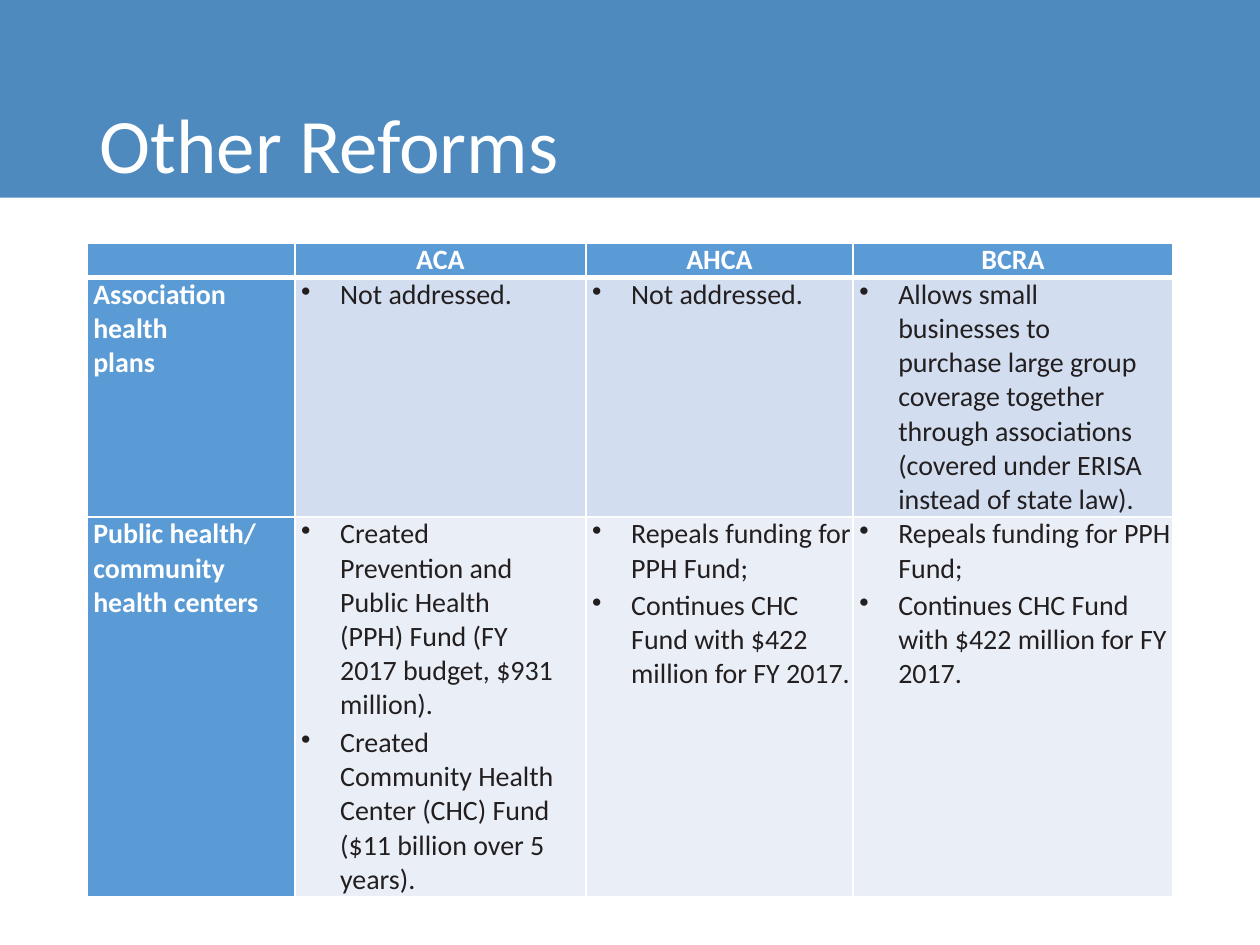
from lxml.etree import SubElement
from pptx import Presentation
from pptx.dml.color import RGBColor
from pptx.enum.shapes import MSO_SHAPE
from pptx.enum.text import MSO_ANCHOR, PP_ALIGN
from pptx.oxml.ns import qn
from pptx.util import Inches, Pt

FONT = "Calibri"
WHITE = RGBColor(0xFF, 0xFF, 0xFF)
INK = RGBColor(0x23, 0x1F, 0x20)
BANNER_BLUE = RGBColor(0x4E, 0x8A, 0xBE)
HEADER_BLUE = RGBColor(0x5B, 0x9B, 0xD5)
ROW_FILLS = [RGBColor(0xD2, 0xDE, 0xEF), RGBColor(0xEA, 0xEF, 0xF7)]

COLUMN_WIDTHS = [1.65, 2.31, 2.12, 2.54]
ROW_HEIGHTS = [0.27, 1.9, 3.01]
BILLS = ["", "ACA", "AHCA", "BCRA"]
CHC_CONTINUES = "Continues CHC Fund with $422 million for FY 2017."
PPH_REPEAL = "Repeals funding for PPH Fund;"
# Each reform: its heading lines, then for each bill the points and the right inset
REFORMS = [
    (["Association health", "plans"], [
        (["Not addressed."], 0),
        (["Not addressed."], 0),
        (["Allows small businesses to purchase large group coverage together "
          "through associations (covered under ERISA instead of state law)."], 0.17),
    ]),
    (["Public health/ community health centers"], [
        (["Created Prevention and Public Health (PPH) Fund "
          "(FY 2017 budget, $931 million).",
          "Created Community Health Center (CHC) Fund ($11 billion over 5 years)."], 0.23),
        ([PPH_REPEAL, CHC_CONTINUES], 0),
        ([PPH_REPEAL, CHC_CONTINUES], 0),
    ]),
]


def style_font(paragraph, size, color, bold=False):
    font = paragraph.font
    font.name, font.size, font.bold = FONT, Pt(size), bold
    font.color.rgb = color


def indent(paragraph, left, first=0.0, bullet=None):
    properties = paragraph._p.get_or_add_pPr()
    properties.set("marL", str(Inches(left)))
    properties.set("indent", str(Inches(first)))
    if bullet:
        mark = properties.makeelement(qn("a:buChar"), {"char": bullet})
        # The bullet has to stand before the default run properties
        properties.find(qn("a:defRPr")).addprevious(mark)


def add_borders(cell, top, bottom):
    """Draw white borders; top and bottom are widths in points."""
    properties = cell._tc.get_or_add_tcPr()
    for side, width in (("L", 1), ("R", 1), ("T", top), ("B", bottom)):
        line = SubElement(properties, qn(f"a:ln{side}"), w=str(Pt(width)))
        fill = SubElement(line, qn("a:solidFill"))
        SubElement(fill, qn("a:srgbClr"), val=str(WHITE))


def format_cell(cell, fill, top=1, bottom=1, inset=(0, 0)):
    add_borders(cell, top, bottom)
    cell.fill.solid()
    cell.fill.fore_color.rgb = fill
    cell.margin_left, cell.margin_right = map(Inches, inset)
    cell.margin_top = cell.margin_bottom = 0


def write_lines(cell, lines, color, bold=False):
    """Write one paragraph per line and return the paragraphs."""
    cell.text = "\n".join(lines)
    paragraphs = cell.text_frame.paragraphs
    for paragraph in paragraphs:
        style_font(paragraph, 16, color, bold)
    return paragraphs


def fill_header(cell, bill):
    format_cell(cell, HEADER_BLUE, bottom=3, inset=(0.07, 0.07))
    write_lines(cell, [bill], WHITE, bold=True)[0].alignment = PP_ALIGN.CENTER


def fill_heading(cell, lines, top):
    format_cell(cell, HEADER_BLUE, top)
    paragraphs = write_lines(cell, lines, WHITE, bold=True)
    paragraphs[0].space_before = Pt(1.8)
    for paragraph in paragraphs:
        indent(paragraph, 0.05)


def fill_points(cell, points, fill, top, right):
    format_cell(cell, fill, top, inset=(0, right))
    for paragraph in write_lines(cell, points, INK):
        paragraph.space_before = Pt(1.8)
        indent(paragraph, 0.36, -0.31, "•")


def add_title(slide, text):
    title = slide.shapes.title
    title.left, title.top = Inches(0.69), Inches(0.11)
    title.width, title.height = Inches(9.06), Inches(1.45)
    frame = title.text_frame
    frame.text = text
    frame.vertical_anchor = MSO_ANCHOR.BOTTOM
    heading = frame.paragraphs[0]
    heading.alignment = PP_ALIGN.LEFT
    heading.line_spacing = 0.9
    style_font(heading, 44, WHITE)


def add_banner(slide):
    banner = slide.shapes.add_shape(
        MSO_SHAPE.RECTANGLE, 0, 0, Inches(10), Inches(1.57))
    banner.shadow.inherit = False
    banner.fill.solid()
    banner.fill.fore_color.rgb = BANNER_BLUE
    banner.line.fill.background()
    slide.shapes.title.element.addprevious(banner.element)


def add_reform_table(slide):
    table = slide.shapes.add_table(
        len(ROW_HEIGHTS), len(COLUMN_WIDTHS), Inches(0.69), Inches(1.93),
        Inches(sum(COLUMN_WIDTHS)), Inches(sum(ROW_HEIGHTS))).table
    table.horz_banding = False
    for column, width in zip(table.columns, COLUMN_WIDTHS):
        column.width = Inches(width)
    for row, height in zip(table.rows, ROW_HEIGHTS):
        row.height = Inches(height)

    for column, bill in enumerate(BILLS):
        fill_header(table.cell(0, column), bill)
    for row, (heading, positions) in enumerate(REFORMS, 1):
        top = 3 if row == 1 else 1
        fill_heading(table.cell(row, 0), heading, top)
        for column, (points, right) in enumerate(positions, 1):
            fill_points(table.cell(row, column), points,
                        ROW_FILLS[row - 1], top, right)


def main():
    presentation = Presentation()
    presentation.slide_width, presentation.slide_height = Inches(10), Inches(7.5)
    slide = presentation.slides.add_slide(
        presentation.slide_layouts.get_by_name("Title Only"))
    add_title(slide, "Other Reforms")
    add_banner(slide)
    add_reform_table(slide)
    presentation.save("out.pptx")


if __name__ == "__main__":
    main()
